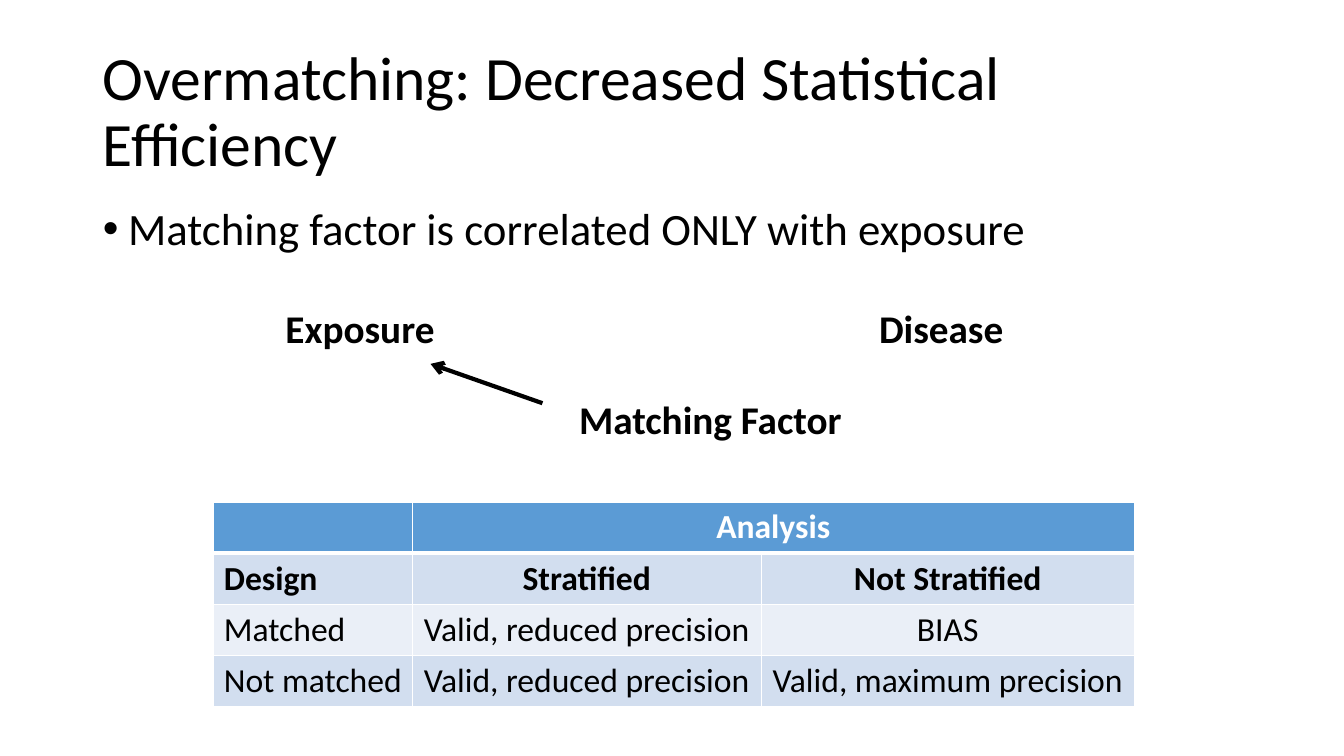
"""Build the slide on overmatching and statistical efficiency."""
from typing import NamedTuple

from lxml.etree import SubElement
from pptx import Presentation
from pptx.dml.color import RGBColor
from pptx.enum.shapes import MSO_CONNECTOR
from pptx.enum.text import MSO_ANCHOR, MSO_AUTO_SIZE, PP_ALIGN
from pptx.oxml import parse_xml
from pptx.oxml.ns import nsdecls, qn
from pptx.util import Inches, Pt

FONT = "Calibri"
BLACK, WHITE = "000000", "FFFFFF"
HEAD, DARK, LIGHT = "5B9BD5", "D2DEEF", "EAEFF7"
LEFT, MID = PP_ALIGN.LEFT, PP_ALIGN.CENTER


class Label(NamedTuple):
    """A bold label of the causal diagram."""
    text: str
    left: float
    top: float
    width: float
    align: PP_ALIGN


class Row(NamedTuple):
    """A table row with its look."""
    cells: tuple
    fill: str
    ink: str
    bold: bool
    rule: int


LABELS = [
    Label("Exposure", 2.07, 2.97, 3, MID),
    Label("Disease", 8.62, 2.97, 2.07, LEFT),
    Label("Matching Factor", 4.89, 3.87, 4.31, MID),
]
WIDTHS = [1.97, 3.46, 3.7]
ROWS = [
    Row(("", "Analysis", ""), HEAD, WHITE, True, 3),
    Row(("Design", "Stratified", "Not Stratified"), DARK, BLACK, True, 1),
    Row(("Matched", "Valid, reduced precision", "BIAS"),
        LIGHT, BLACK, False, 1),
    Row(("Not matched", "Valid, reduced precision",
         "Valid, maximum precision"), DARK, BLACK, False, 1),
]


def paint(code: str) -> RGBColor:
    """Turn a hex string into a colour."""
    return RGBColor.from_string(code)


def style(frame, size: int, align=LEFT, ink: str = BLACK,
          bold: bool = False) -> None:
    """Format all text in a frame."""
    for para in frame.paragraphs:
        para.alignment = align
        for run in para.runs:
            font = run.font
            font.name, font.size, font.bold = FONT, Pt(size), bold
            font.color.rgb = paint(ink)


def place(shape, left: float, top: float, width: float, height: float) -> None:
    """Move and size a shape in inches."""
    shape.left, shape.top = Inches(left), Inches(top)
    shape.width, shape.height = Inches(width), Inches(height)


def fill_holder(shape, text: str, box: tuple, size: int, anchor) -> None:
    """Fill and format a placeholder."""
    place(shape, *box)
    frame = shape.text_frame
    frame.text = text
    frame.word_wrap = True
    frame.auto_size = MSO_AUTO_SIZE.NONE
    frame.vertical_anchor = anchor
    frame.paragraphs[0].line_spacing = 0.9
    style(frame, size)


def add_bullet(para) -> None:
    """Give a paragraph a hanging round bullet."""
    para.space_before = Pt(10)
    props = para._p.get_or_add_pPr()
    props.set("marL", str(Inches(0.25)))
    props.set("indent", str(Inches(-0.25)))
    SubElement(props, qn("a:buFont"), typeface="Arial")
    SubElement(props, qn("a:buChar"), char="•")


def add_label(slide, label: Label) -> None:
    """Draw one label of the diagram."""
    box = slide.shapes.add_textbox(0, 0, 0, 0)
    place(box, label.left, label.top, label.width, 0.57)
    frame = box.text_frame
    frame.text = label.text
    frame.word_wrap = True
    frame.auto_size = MSO_AUTO_SIZE.SHAPE_TO_FIT_TEXT
    style(frame, 28, label.align, bold=True)


def add_arrow(slide, start: tuple, end: tuple) -> None:
    """Draw an arrow between two points."""
    ends = [Inches(value) for value in start + end]
    arrow = slide.shapes.add_connector(MSO_CONNECTOR.STRAIGHT, *ends)
    arrow.line.color.rgb = paint(BLACK)
    arrow.line.width = Pt(3)
    SubElement(arrow.line._get_or_add_ln(), qn("a:tailEnd"), type="arrow")
    SubElement(arrow._element.spPr, qn("a:effectLst"))


def add_rules(cell, above: int, below: int) -> None:
    """Draw white borders round a cell."""
    props = cell._tc.get_or_add_tcPr()
    sides = (("L", 1), ("R", 1), ("T", above), ("B", below))
    for spot, (side, width) in enumerate(sides):
        props.insert(spot, parse_xml(
            f'<a:ln{side} {nsdecls("a")} w="{Pt(width)}"><a:solidFill>'
            f'<a:srgbClr val="{WHITE}"/></a:solidFill></a:ln{side}>'))


def add_grid(slide) -> None:
    """Draw the table of designs and analyses."""
    table = slide.shapes.add_table(
        len(ROWS), len(WIDTHS), Inches(2.12), Inches(4.98),
        Inches(sum(WIDTHS)), Inches(0.5 * len(ROWS))).table
    for column, width in zip(table.columns, WIDTHS):
        column.width = Inches(width)
    above = 1
    for r, row in enumerate(ROWS):
        for c, text in enumerate(row.cells):
            cell = table.cell(r, c)
            cell.text = text
            cell.fill.solid()
            cell.fill.fore_color.rgb = paint(row.fill)
            style(cell.text_frame, 24, MID if c else LEFT, row.ink, row.bold)
            add_rules(cell, above, row.rule)
        above = row.rule
    table.cell(0, 1).merge(table.cell(0, 2))
    table.cell(0, 1).vertical_anchor = MSO_ANCHOR.MIDDLE


def main() -> None:
    """Build and save the deck."""
    deck = Presentation()
    deck.slide_width, deck.slide_height = Inches(13.33), Inches(7.5)
    slide = deck.slides.add_slide(deck.slide_layouts[1])
    title, body = slide.placeholders
    fill_holder(title, "Overmatching: Decreased Statistical Efficiency",
                (0.92, 0.4, 11.5, 1.45), 44, MSO_ANCHOR.MIDDLE)
    fill_holder(body, "Matching factor is correlated ONLY with exposure",
                (0.92, 2, 11.5, 4.76), 32, MSO_ANCHOR.TOP)
    add_bullet(body.text_frame.paragraphs[0])
    add_grid(slide)
    for label in LABELS:
        add_label(slide, label)
    add_arrow(slide, (5.38, 4), (4.27, 3.61))
    deck.save("out.pptx")


if __name__ == "__main__":
    main()
